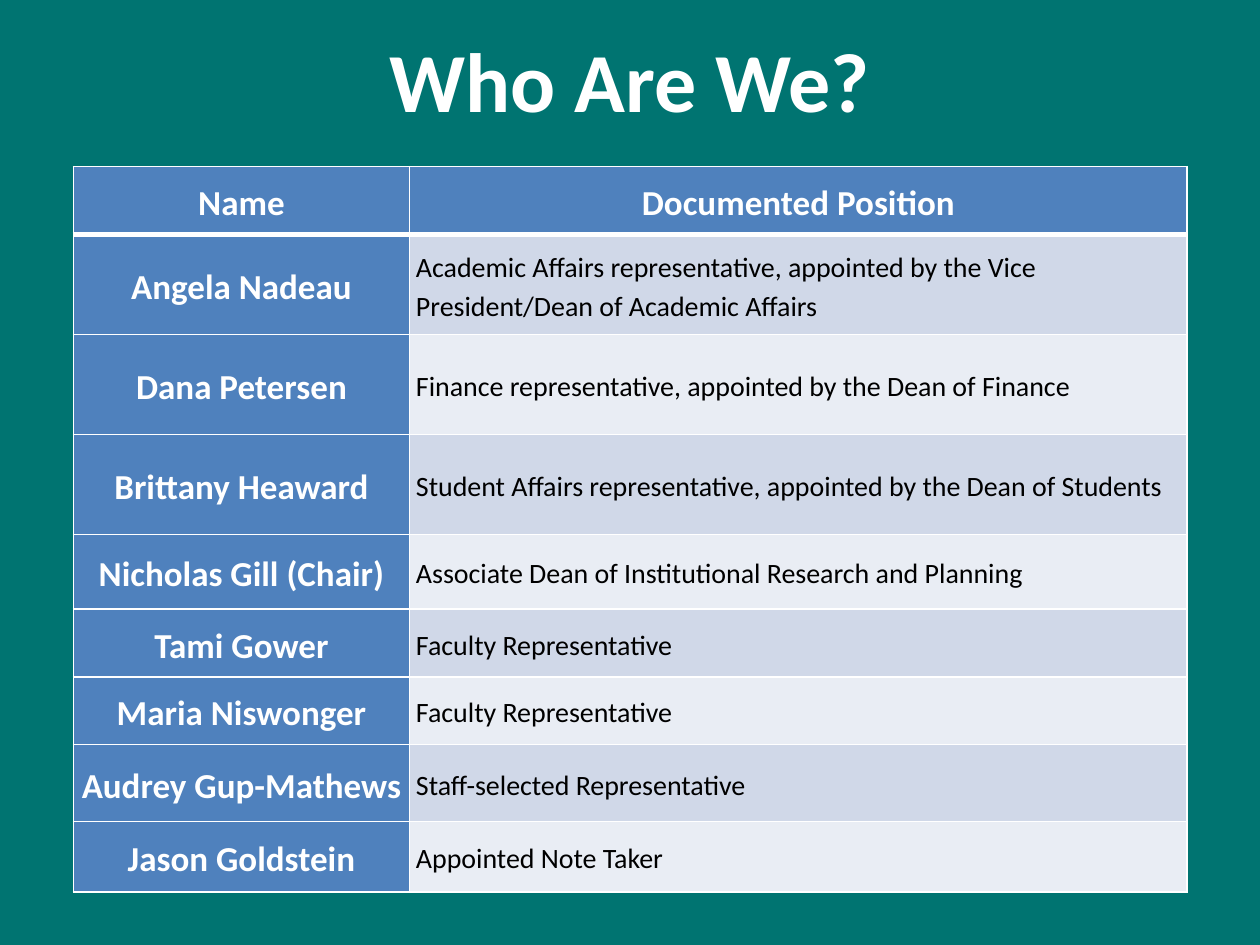
from lxml.etree import SubElement
from pptx import Presentation
from pptx.dml.color import RGBColor
from pptx.enum.text import MSO_ANCHOR as Anchor, PP_ALIGN as Align
from pptx.oxml.ns import qn
from pptx.util import Pt

WHITE, BLACK, TEAL, BLUE = "FFFFFF", "000000", "007471", "4F81BD"
BANDS = ["D0D8E8", "E9EDF4"]
HEADING = {"size": Pt(20), "bold": True, "color": WHITE, "align": Align.CENTER}
BODY = {"size": Pt(16), "bold": False, "color": BLACK, "align": Align.LEFT}
TITLE = HEADING | {"size": Pt(48)}
COLUMN_WIDTHS = [192.24, 444.24]
ROWS = [
    ("Name", "Documented Position", 38.9),
    ("Angela Nadeau",
     "Academic Affairs representative, appointed by the Vice President/Dean of Academic Affairs", 57.1),
    ("Dana Petersen", "Finance representative, appointed by the Dean of Finance", 57.1),
    ("Brittany Heaward", "Student Affairs representative, appointed by the Dean of Students", 57.1),
    ("Nicholas Gill (Chair)", "Associate Dean of Institutional Research and Planning", 42.7),
    ("Tami Gower", "Faculty Representative", 38.7),
    ("Maria Niswonger", "Faculty Representative", 38.7),
    ("Audrey Gup-Mathews", "Staff-selected Representative", 43.9),
    ("Jason Goldstein", "Appointed Note Taker", 40.5),
]


def rgb(value):
    return RGBColor.from_string(value)


def set_attributes(target, values):
    for name, value in values.items():
        setattr(target, name, value)


def write_text(frame, text, style, line_spacing=1.0):
    paragraph = frame.paragraphs[0]
    set_attributes(paragraph, {"alignment": style["align"], "line_spacing": line_spacing})
    run = paragraph.add_run()
    run.text = text
    set_attributes(run.font, {"name": "Calibri", "size": style["size"], "bold": style["bold"]})
    run.font.color.rgb = rgb(style["color"])


def add_borders(cell, widths):
    properties = cell._tc.get_or_add_tcPr()
    for side, width in widths.items():
        line = SubElement(properties, qn(f"a:ln{side}"), w=str(Pt(width)))
        fill = SubElement(line, qn("a:solidFill"))
        SubElement(fill, qn("a:srgbClr"), val=WHITE)


def add_title(slide, left, top, width, height):
    frame = slide.shapes.add_textbox(Pt(left), Pt(top), Pt(width), Pt(height)).text_frame
    set_attributes(frame, {"word_wrap": True, "vertical_anchor": Anchor.MIDDLE})
    write_text(frame, "Who Are We?", TITLE)


def fill_cell(cell, text, row, column):
    is_heading = row == 0 or column == 0
    set_attributes(cell, {
        "margin_left": Pt(3.6), "margin_right": Pt(3.6),
        "margin_top": 0, "margin_bottom": 0,
        "vertical_anchor": Anchor.MIDDLE,
    })
    add_borders(cell, {"L": 1, "R": 1, "T": 3 if row == 1 else 1, "B": 3 if row == 0 else 1})
    cell.fill.solid()
    cell.fill.fore_color.rgb = rgb(BLUE if is_heading else BANDS[(row - 1) % 2])
    write_text(cell.text_frame, text, HEADING if is_heading else BODY, 1.15)


def add_member_table(slide, left, top, width, height):
    table = slide.shapes.add_table(
        len(ROWS), len(COLUMN_WIDTHS), Pt(left), Pt(top), Pt(width), Pt(height)).table
    for column, column_width in zip(table.columns, COLUMN_WIDTHS):
        column.width = Pt(column_width)
    for row, (*texts, row_height) in enumerate(ROWS):
        table.rows[row].height = Pt(row_height)
        for column, text in enumerate(texts):
            fill_cell(table.cell(row, column), text, row, column)


def main():
    presentation = Presentation()
    set_attributes(presentation, {"slide_width": Pt(720), "slide_height": Pt(540)})
    slide = presentation.slides.add_slide(presentation.slide_layouts[6])
    slide.background.fill.solid()
    slide.background.fill.fore_color.rgb = rgb(TEAL)
    add_title(slide, 36, 0, 648, 90)
    add_member_table(slide, 41.9, 95.2, sum(COLUMN_WIDTHS), sum(row[-1] for row in ROWS))
    presentation.save("out.pptx")


if __name__ == "__main__":
    main()
